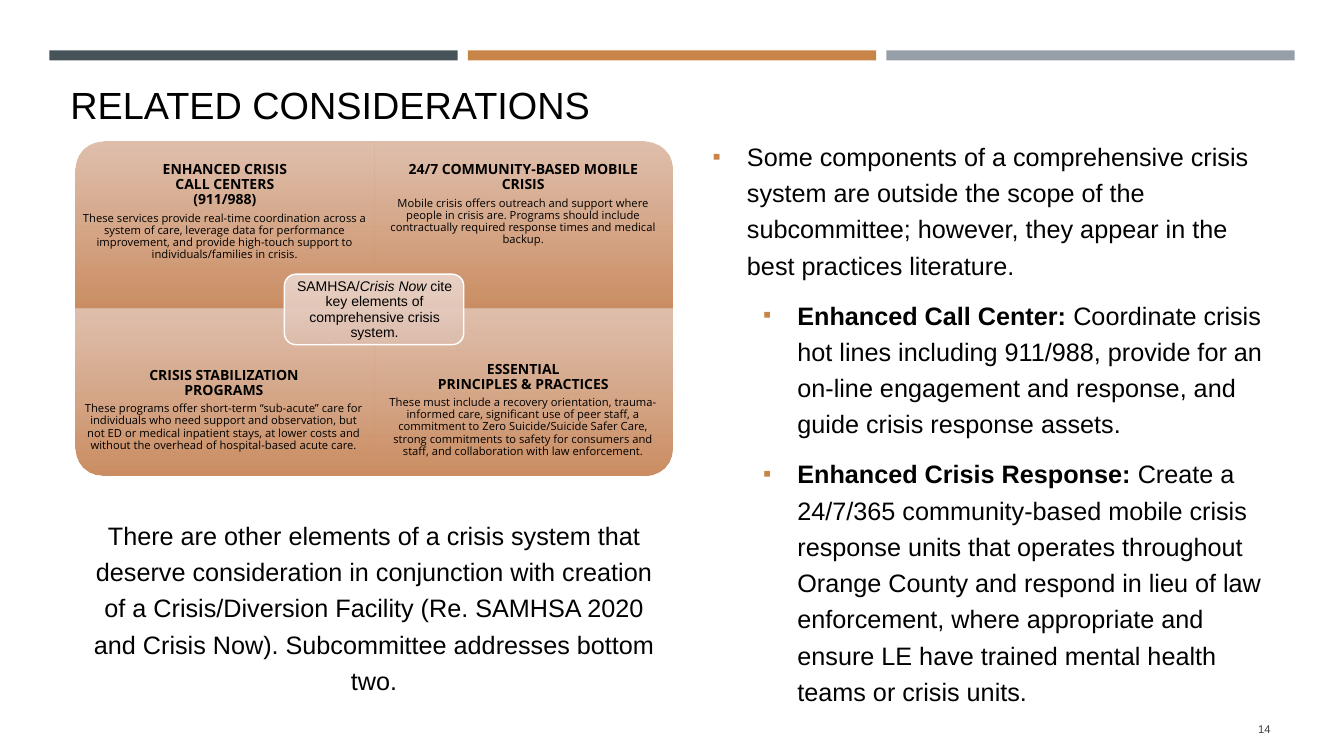
from lxml.etree import SubElement
from pptx import Presentation
from pptx.dml.color import RGBColor
from pptx.enum.shapes import MSO_SHAPE
from pptx.enum.text import MSO_ANCHOR, PP_ALIGN
from pptx.oxml.ns import qn
from pptx.util import Inches, Pt

HUES = {
    "slate": "465359", "copper": "C98447", "grey": "969FA7",
    "ink": "000000", "page": "404040", "white": "FFFFFF",
    "light": "DCB8A3", "dark": "CB8E63", "pale": "EBD8CE", "soft": "DEBDAC",
}


class Deck:
    """Holds the style and the current slide."""

    def __init__(self):
        self.show = Presentation()
        self.show.slide_width = Inches(13.33)
        self.show.slide_height = Inches(7.5)
        self.slide = self.show.slides.add_slide(self.show.slide_layouts[6])

    def hue(self, name):
        return RGBColor.from_string(HUES[name])

    def shape(self, kind, box):
        item = self.slide.shapes.add_shape(kind, *map(Inches, box))
        item.shadow.inherit = False
        item.line.fill.background()
        return item

    def bar(self, box, hue):
        item = self.shape(MSO_SHAPE.RECTANGLE, box)
        item.fill.solid()
        item.fill.fore_color.rgb = self.hue(hue)

    def fade(self, kind, box, top, base, turn=0):
        item = self.shape(kind, box)
        item.rotation = turn
        item.fill.gradient()
        item.fill.gradient_angle = (turn - 90) % 360
        stops = item.fill.gradient_stops
        for stop, hue, spot in zip(stops, (top, base), (0, 1)):
            stop.color.rgb = self.hue(hue)
            stop.position = spot
        tint = item.fill._xPr.find(".//" + qn("a:srgbClr"))
        SubElement(tint, qn("a:alpha"), val="90000")
        return item

    def text(self, box, anchor=MSO_ANCHOR.TOP, pads=(0.1, 0.05, 0.1, 0.05)):
        frame = self.slide.shapes.add_textbox(*map(Inches, box)).text_frame
        frame.word_wrap = True
        frame.vertical_anchor = anchor
        (frame.margin_left, frame.margin_top,
         frame.margin_right, frame.margin_bottom) = map(Inches, pads)
        return frame

    def para(self, frame, runs, size, align=PP_ALIGN.LEFT, lead=1.0,
             before=0, after=0, font="Arial", hue="ink"):
        para = frame.paragraphs[0]
        if para.runs:
            para = frame.add_paragraph()
        para.alignment = align
        para.line_spacing = lead
        para.space_before, para.space_after = Pt(before), Pt(after)
        for words, style in runs:
            for row, line in enumerate(words.split("\n")):
                if row:
                    para.add_line_break()
                run = para.add_run()
                run.text = line
                run.font.name, run.font.size = font, Pt(size)
                run.font.bold, run.font.italic = style == "b", style == "i"
                run.font.color.rgb = self.hue(hue)
        return para

    def bullet(self, para, left):
        props = para._p.get_or_add_pPr()
        props.set("marL", str(Inches(left)))
        props.set("indent", str(Inches(-0.34)))
        tint = SubElement(props, qn("a:buClr"))
        SubElement(tint, qn("a:srgbClr"), val=HUES["copper"])
        SubElement(props, qn("a:buSzPct"), val="92000")
        SubElement(props, qn("a:buFont"), typeface="Arial")
        SubElement(props, qn("a:buChar"), char="▪")


def main():
    deck = Deck()
    mid = PP_ALIGN.CENTER
    for col, hue in enumerate(("slate", "copper", "grey")):
        deck.bar((0.49 + 4.15 * col, 0.5, 4.05, 0.1), hue)

    title = deck.text((0.6, 0.8, 12.06, 0.51), MSO_ANCHOR.BOTTOM)
    deck.para(title, [("RELATED CONSIDERATIONS", "")], 27, lead=1.07)
    page = deck.text((11.55, 7.03, 1.15, 0.4), MSO_ANCHOR.MIDDLE)
    deck.para(page, [("14", "")], 8, PP_ALIGN.RIGHT, hue="page")

    points = [
        (0.34, "", "Some components of a comprehensive crisis system are outside the scope of the subcommittee; however, they appear in the best practices literature."),
        (0.84, "Enhanced Call Center: ", "Coordinate crisis hot lines including 911/988, provide for an on-line engagement and response, and guide crisis response assets."),
        (0.84, "Enhanced Crisis Response: ", "Create a 24/7/365 community-based mobile crisis response units that operates throughout Orange County and respond in lieu of law enforcement, where appropriate and ensure LE have trained mental health teams or crisis units."),
    ]
    body = deck.text((6.97, 1.29, 5.69, 5.8))
    for left, head, words in points:
        runs = [(head, "b"), (words, "")] if head else [(words, "")]
        para = deck.para(body, runs, 18, lead=1.2, before=3.8, after=6)
        deck.bullet(para, left)

    tiles = [
        (270, (0.05, 0.2, 0.05, 0.05), "ENHANCED CRISIS\nCALL CENTERS\n(911/988)", "These services provide real-time coordination across a system of care, leverage data for performance improvement, and provide high-touch support to individuals/families in crisis."),
        (0, (0.08, 0.08, 0.08, 0.08), "24/7 COMMUNITY-BASED MOBILE\nCRISIS", "Mobile crisis offers outreach and support where people in crisis are. Programs should include contractually required response times and medical backup."),
        (180, (0.08, 0, 0.1, 0.08), "CRISIS STABILIZATION\nPROGRAMS", "These programs offer short-term “sub-acute” care for individuals who need support and observation, but not ED or medical inpatient stays, at lower costs and without the overhead of hospital-based acute care."),
        (90, (0.08, 0, 0.08, 0.08), "ESSENTIAL\nPRINCIPLES & PRACTICES", "These must include a recovery orientation, trauma-informed care, significant use of peer staff, a commitment to Zero Suicide/Suicide Safer Care, strong commitments to safety for consumers and staff, and collaboration with law enforcement."),
    ]
    wide, high = 2.96, 1.66
    for spot, (turn, pads, head, words) in enumerate(tiles):
        row, col = divmod(spot, 2)
        left, top = 0.75 + wide * col, 1.4 + high * row
        w, h = (high, wide) if turn % 180 else (wide, high)
        box = (left + (wide - w) / 2, top + (high - h) / 2, w, h)
        deck.fade(MSO_SHAPE.ROUND_1_RECTANGLE, box, "light", "dark", turn)
        frame = deck.text((left, top + 0.42 * row, wide, 1.25),
                          MSO_ANCHOR.MIDDLE, pads)
        for part, style, size in ((head, "b", 10), (words, "", 8)):
            deck.para(frame, [(part, style)], size, mid, 0.9,
                      after=0.35 * size, font="Open Sans")

    hub = deck.fade(MSO_SHAPE.ROUNDED_RECTANGLE, (2.82, 2.72, 1.78, 0.7),
                    "pale", "soft")
    hub.line.color.rgb = deck.hue("white")
    hub.line.width = Pt(1)
    core = deck.text((2.86, 2.76, 1.71, 0.63), MSO_ANCHOR.MIDDLE, (0.04,) * 4)
    deck.para(core, [("SAMHSA/", ""), ("Crisis Now ", "i"),
                     ("cite key elements of comprehensive crisis system.", "")],
              10, mid, 0.9)

    note = deck.text((0.75, 5.05, 5.92, 1.52))
    deck.para(note, [("There are other elements of a crisis system that deserve consideration in conjunction with creation of a Crisis/Diversion Facility (Re. SAMHSA 2020 and Crisis Now). Subcommittee addresses bottom two.", "")],
              18, mid, 1.2, 3.8, 6)
    deck.show.save("out.pptx")


if __name__ == "__main__":
    main()
